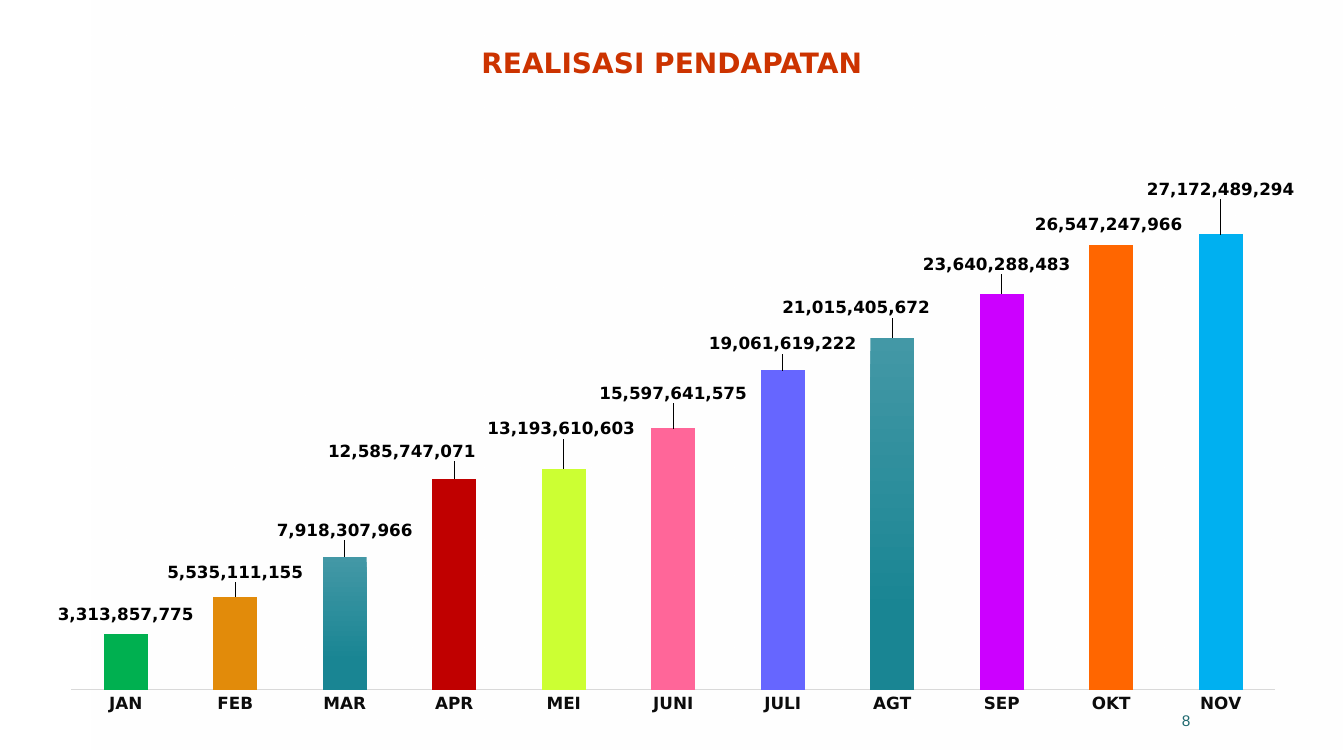
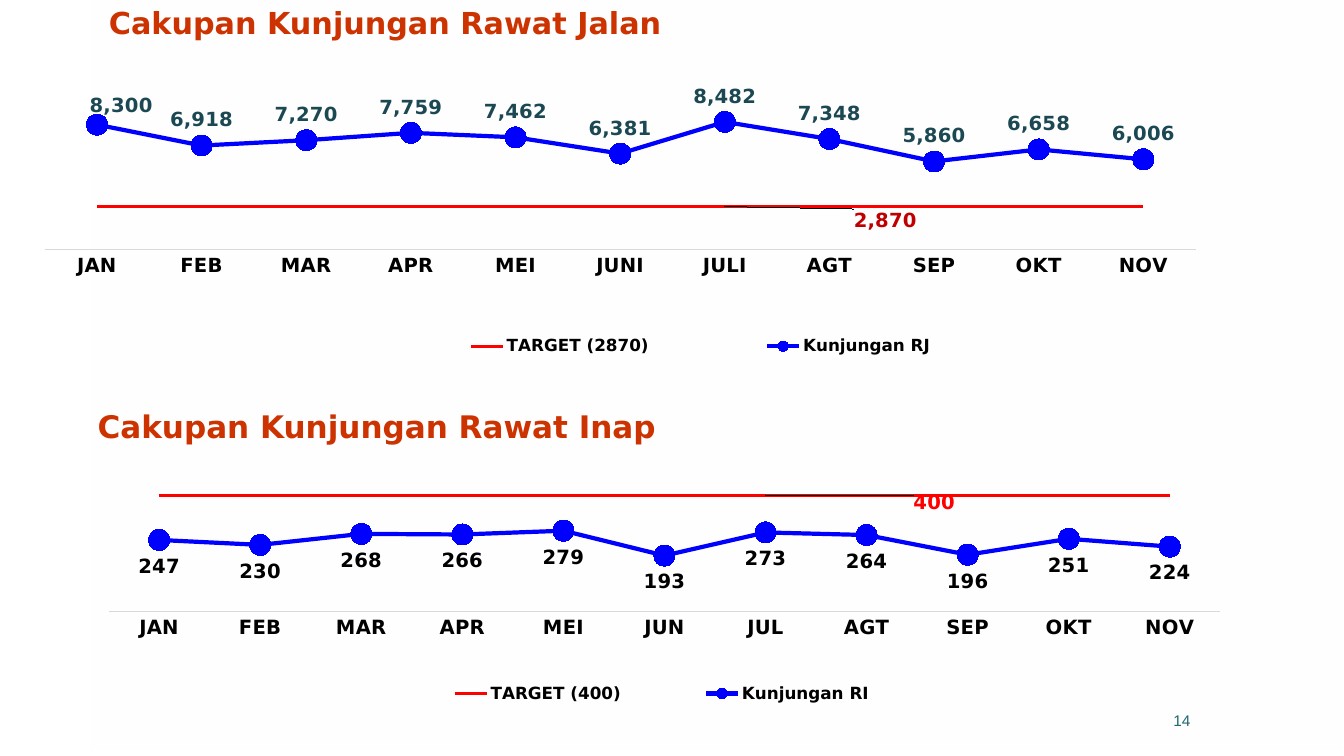
from dataclasses import dataclass

from pptx import Presentation
from pptx.chart.data import CategoryChartData
from pptx.dml.color import RGBColor
from pptx.enum.chart import (XL_CHART_TYPE, XL_LABEL_POSITION,
                             XL_LEGEND_POSITION, XL_MARKER_STYLE, XL_TICK_MARK)
from pptx.enum.shapes import MSO_SHAPE
from pptx.enum.text import MSO_ANCHOR, PP_ALIGN
from pptx.oxml import parse_xml
from pptx.oxml.ns import nsdecls, qn
from pptx.util import Cm, Pt


@dataclass(frozen=True)
class Theme:
    heading: str = "DejaVu Sans"
    body: str = "Arial"
    backdrop: str = "FFFFFF"
    title: str = "CC3300"
    number: str = "1F696F"
    chart_text: str = "164B4F"
    axis_text: str = "0C0C0C"
    ink: str = "000000"
    teal_ink: str = "1B4852"
    axis_line: str = "D9D9D9"
    target: str = "FF0000"
    target_dark: str = "C00000"
    visits: str = "0000FF"
    bar_top: str = "4398A6"
    bar_bottom: str = "198593"
    title_size: float = 20
    number_size: float = 11
    chart_size: float = 10
    small_size: float = 12
    label_size: float = 14
    number_format: str = "#,##0"


THEME = Theme()


@dataclass(frozen=True)
class Box:
    left: float
    top: float
    width: float
    height: float

    def lengths(self):
        return Cm(self.left), Cm(self.top), Cm(self.width), Cm(self.height)


def colour(value):
    return RGBColor.from_string(value)


def style_font(font, size, ink, name=THEME.heading, bold=True):
    font.name = name
    font.size = Pt(size)
    font.bold = bold
    font.color.rgb = colour(ink)


def add_text(page, box, text, size=THEME.title_size, ink=THEME.title,
             name=THEME.heading, bold=True, align=PP_ALIGN.CENTER,
             anchor=MSO_ANCHOR.BOTTOM, spacing=0.9, inset=(0.25, 0.13)):
    frame = page.shapes.add_textbox(*box.lengths()).text_frame
    frame.word_wrap = True
    frame.vertical_anchor = anchor
    frame.margin_left = frame.margin_right = Cm(inset[0])
    frame.margin_top = frame.margin_bottom = Cm(inset[1])
    para = frame.paragraphs[0]
    para.alignment = align
    para.line_spacing = spacing
    span = para.add_run()
    span.text = text
    style_font(span.font, size, ink, name, bold)


def fill_gradient(fill, stops):
    fill.gradient()
    fill.gradient_angle = 270
    for stop, (place, shade) in zip(fill.gradient_stops, stops):
        stop.position = place
        stop.color.rgb = colour(shade)


def add_page(deck, number):
    page = deck.slides.add_slide(deck.slide_layouts[6])
    backdrop = page.shapes.add_shape(MSO_SHAPE.RECTANGLE,
                                     *Box(2.31, 0, 31.52, 19.05).lengths())
    backdrop.shadow.inherit = False
    backdrop.line.fill.background()
    fill_gradient(backdrop.fill, ((0, THEME.backdrop), (1, THEME.backdrop)))
    shades = backdrop._element.spPr.iter(qn("a:srgbClr"))
    for shade, opacity in zip(shades, (60000, 0)):
        shade.append(parse_xml(f'<a:alpha {nsdecls("a")} val="{opacity}"/>'))
    add_text(page, Box(22.35, 17.65, 7.9, 1.02), number, size=THEME.number_size,
             ink=THEME.number, name=THEME.body, bold=False,
             align=PP_ALIGN.RIGHT, anchor=MSO_ANCHOR.MIDDLE, spacing=1.0)
    return page


def set_layout(parent, index, percents, modes=()):
    for former in parent.findall(qn("c:layout")):
        parent.remove(former)
    parts = [f'<c:{tag} val="{value}"/>' for tag, value in modes]
    parts += [f'<c:{tag} val="{percent / 100:.4f}"/>'
              for tag, percent in zip("xywh", percents)]
    parent.insert(index, parse_xml(
        f'<c:layout {nsdecls("c")}><c:manualLayout>{"".join(parts)}'
        "</c:manualLayout></c:layout>"))


EDGES = (("xMode", "edge"), ("yMode", "edge"))


def add_chart(page, box, kind, months, rows, top_value, plot, axis_size, axis_ink):
    data = CategoryChartData(number_format=THEME.number_format)
    data.categories = months
    for name, values in rows:
        data.add_series(name, values)
    chart = page.shapes.add_chart(kind, *box.lengths(), data).chart
    chart.has_title = False
    chart.has_legend = False
    style_font(chart.font, THEME.chart_size, THEME.chart_text, THEME.body, False)
    chart.plots[0].vary_by_categories = False
    values_axis = chart.value_axis
    values_axis.minimum_scale = 0
    values_axis.maximum_scale = top_value
    values_axis.has_major_gridlines = False
    values_axis.visible = False
    months_axis = chart.category_axis
    months_axis.major_tick_mark = XL_TICK_MARK.NONE
    months_axis.minor_tick_mark = XL_TICK_MARK.NONE
    months_axis.format.line.color.rgb = colour(THEME.axis_line)
    months_axis.format.line.width = Pt(0.75)
    style_font(months_axis.tick_labels.font, axis_size, axis_ink)
    area = chart.plots[0]._element.getparent()
    set_layout(area, 0, plot, (("layoutTarget", "inner"),) + EDGES)
    return chart


def hide_leader_lines(series):
    series.data_labels._element.append(parse_xml(
        f'<c:extLst {nsdecls("c")}>'
        '<c:ext uri="{CE6537A1-D6FC-4f65-9D91-7224C49458BB}" '
        'xmlns:c15="http://schemas.microsoft.com/office/drawing/2012/chart">'
        '<c15:showLeaderLines val="0"/></c:ext></c:extLst>'))


def label_series(series, position, size, ink, shifts, show_all=True):
    labels = series.data_labels
    labels.show_value = show_all
    labels.number_format = THEME.number_format
    labels.number_format_is_linked = False
    labels.position = position
    style_font(labels.font, size, ink)
    for index in shifts:
        label = series.points[index].data_label
        label.position = position
        style_font(label.font, size, ink)
    group = labels._element
    for entry in group.findall(qn("c:dLbl")):
        index = int(entry.find(qn("c:idx")).get("val"))
        set_layout(entry, 1, shifts[index])
        entry.insert(2, parse_xml(
            f'<c:numFmt {nsdecls("c")} formatCode="{THEME.number_format}" '
            'sourceLinked="0"/>'))
    for body in group.iter(qn("a:bodyPr")):
        body.set("wrap", "none")


def income_chart(page, box):
    incomes = {
        "JAN": (3313857775, "00B050", (0, -1)),
        "FEB": (5535111155, "E28B0A", (0, -1.9)),
        "MAR": (7918307966, None, (0, -2.3)),
        "APR": (12585747071, "C00000", (-4.2, -2.4)),
        "MEI": (13193610603, "CCFF33", (-0.2, -4.6)),
        "JUNI": (15597641575, "FF6699", (0, -3.7)),
        "JULI": (19061619222, "6666FF", (0, -2.2)),
        "AGT": (21015405672, None, (-2.9, -2.8)),
        "SEP": (23640288483, "CC00FF", (-0.4, -2.7)),
        "OKT": (26547247966, "FF6600", (-0.2, -1.2)),
        "NOV": (27172489294, "00B0F0", (0, -5.5)),
    }
    amounts, fills, shifts = zip(*incomes.values())
    chart = add_chart(page, box, XL_CHART_TYPE.COLUMN_CLUSTERED, list(incomes),
                      [("Series 1", amounts)], 30_000_000_000,
                      (1.5, 2.8, 96.7, 90.5), THEME.small_size, THEME.axis_text)
    chart.plots[0].gap_width = 150
    series = chart.plots[0].series[0]
    series.invert_if_negative = False
    fill_gradient(series.format.fill,
                  ((0, THEME.bar_top), (0.78, THEME.bar_bottom)))
    for index, shade in enumerate(fills):
        if shade:
            point_fill = series.points[index].format.fill
            point_fill.solid()
            point_fill.fore_color.rgb = colour(shade)
    label_series(series, XL_LABEL_POSITION.OUTSIDE_END, THEME.small_size,
                 THEME.ink, dict(enumerate(shifts)))
    hide_leader_lines(series)


def style_line(series, ink, width, marker_size=None):
    series.smooth = False
    series.format.line.color.rgb = colour(ink)
    series.format.line.width = Pt(width)
    marker = series.marker
    if marker_size is None:
        marker.style = XL_MARKER_STYLE.NONE
        return
    marker.style = XL_MARKER_STYLE.CIRCLE
    marker.size = marker_size
    marker.format.fill.solid()
    marker.format.fill.fore_color.rgb = colour(ink)
    marker.format.line.color.rgb = colour(ink)


def visits_panel(page, box, title, title_size, title_height, chart_top, months,
                 target, visits_name, visits, top_value, plot, legend_place,
                 target_width, target_ink, target_shift, label_position,
                 label_ink, label_shifts):
    chart_box = Box(box.left, box.top + chart_top, box.width, box.height - chart_top)
    rows = [(f"TARGET ({target})", [target] * len(months)), (visits_name, visits)]
    chart = add_chart(page, chart_box, XL_CHART_TYPE.LINE_MARKERS, months, rows,
                      top_value, plot, THEME.label_size, THEME.ink)
    target_line, visits_line = chart.plots[0].series
    style_line(target_line, THEME.target, target_width)
    style_line(visits_line, THEME.visits, 3, marker_size=15)
    label_series(target_line, XL_LABEL_POSITION.RIGHT, THEME.label_size,
                 target_ink, {6: target_shift}, show_all=False)
    label_series(visits_line, label_position, THEME.label_size, label_ink,
                 label_shifts)
    chart.has_legend = True
    legend = chart.legend
    legend.position = XL_LEGEND_POSITION.BOTTOM
    legend.include_in_layout = False
    style_font(legend.font, THEME.small_size, THEME.ink)
    set_layout(legend._element, 1, legend_place, EDGES)
    add_text(page, Box(box.left + 0.97, box.top, 16, title_height), title,
             size=title_size)


def income_page(deck):
    page = add_page(deck, "8")
    income_chart(page, Box(1.32, 4.32, 31.39, 14))
    add_text(page, Box(1.69, 0.95, 30.48, 1.24), "REALISASI PENDAPATAN",
             inset=(0.38, 0.18))


def visits_page(deck):
    page = add_page(deck, "14")
    visits_panel(
        page, Box(0.74, 0, 32.16, 10.54), "Cakupan Kunjungan Rawat Jalan",
        title_size=21.6, title_height=1.16, chart_top=2.13,
        months="JAN FEB MAR APR MEI JUNI JULI AGT SEP OKT NOV".split(),
        target=2870, visits_name="Kunjungan RJ",
        visits=[8300, 6918, 7270, 7759, 7462, 6381, 8482, 7348, 5860, 6658, 6006],
        top_value=9000, plot=(1.2, 8.4, 90.2, 40.9),
        legend_place=(25.75, 72.3, 53.7, 12), target_width=2,
        target_ink=THEME.target_dark, target_shift=(9.8, 4.2),
        label_position=XL_LABEL_POSITION.ABOVE, label_ink=THEME.teal_ink,
        label_shifts={0: (1.9, 1.8)})
    visits_panel(
        page, Box(0.53, 9.7, 31.55, 8.79), "Cakupan Kunjungan Rawat Inap",
        title_size=22.2, title_height=1.65, chart_top=2.03,
        months="JAN FEB MAR APR MEI JUN JUL AGT SEP OKT NOV".split(),
        target=400, visits_name="Kunjungan RI",
        visits=[247, 230, 268, 266, 279, 193, 273, 264, 196, 251, 224],
        top_value=450, plot=(7, 5.9, 88.8, 48.5),
        legend_place=(28.3, 77.5, 45.8, 15), target_width=2.25,
        target_ink=THEME.target, target_shift=(11.5, 2.3),
        label_position=XL_LABEL_POSITION.BELOW, label_ink=THEME.ink,
        label_shifts={})


def main():
    deck = Presentation()
    deck.slide_width = Cm(33.87)
    deck.slide_height = Cm(19.05)
    income_page(deck)
    visits_page(deck)
    deck.save("out.pptx")


if __name__ == "__main__":
    main()
